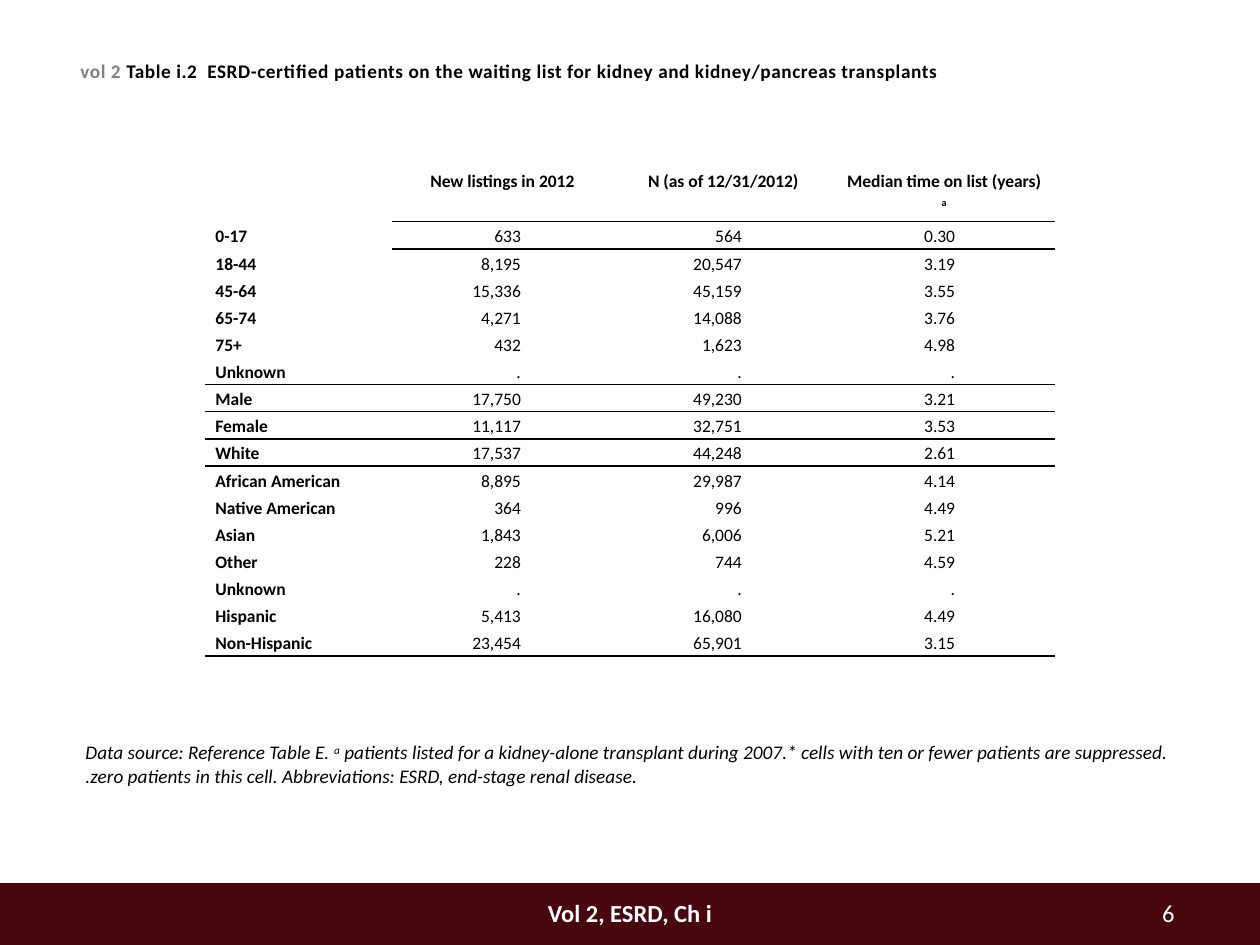
from lxml import etree
from pptx import Presentation
from pptx.dml.color import RGBColor
from pptx.enum.shapes import MSO_SHAPE
from pptx.enum.text import MSO_ANCHOR, PP_ALIGN
from pptx.oxml.ns import qn
from pptx.util import Inches, Pt

LEFT, CENTER, RIGHT = PP_ALIGN.LEFT, PP_ALIGN.CENTER, PP_ALIGN.RIGHT
TOP, MIDDLE = MSO_ANCHOR.TOP, MSO_ANCHOR.MIDDLE
RECTANGLE = MSO_SHAPE.RECTANGLE

MAROON = RGBColor(0x48, 0x07, 0x0E)
WHITE = RGBColor(0xFF, 0xFF, 0xFF)
GRAY = RGBColor(0x80, 0x80, 0x80)
BLACK = RGBColor(0, 0, 0)
FONT = "Calibri"
NO_TABLE_STYLE = "{2D5ABB26-0587-4C30-8999-92F81FD0307C}"

HEADERS = ["", "New listings in 2012", "N (as of 12/31/2012)", "Median time on list (years) "]
PATIENT_ROWS = [
    ("0-17", "633", "564", "0.30"),
    ("18-44", "8,195", "20,547", "3.19"),
    ("45-64", "15,336", "45,159", "3.55"),
    ("65-74", "4,271", "14,088", "3.76"),
    ("75+", "432", "1,623", "4.98"),
    ("Unknown", ".", ".", "."),
    ("Male", "17,750", "49,230", "3.21"),
    ("Female", "11,117", "32,751", "3.53"),
    ("White", "17,537", "44,248", "2.61"),
    ("African American", "8,895", "29,987", "4.14"),
    ("Native American", "364", "996", "4.49"),
    ("Asian", "1,843", "6,006", "5.21"),
    ("Other", "228", "744", "4.59"),
    ("Unknown", ".", ".", "."),
    ("Hispanic", "5,413", "16,080", "4.49"),
    ("Non-Hispanic", "23,454", "65,901", "3.15"),
]
RULED_ROWS = (0, 6, 8, 16)  # table rows with a line below
RIGHT_INSETS = (0.08, 0.73, 0.73, 0.79)


def add_run(paragraph, text, size, color=BLACK, bold=False, italic=False, **attributes):
    """Add a formatted run; attributes go onto its a:rPr, such as spc or baseline."""
    run = paragraph.add_run()
    run.text = text
    font = run.font
    font.name, font.size, font.bold, font.italic = FONT, Pt(size), bold, italic
    font.color.rgb = color
    for key, value in attributes.items():
        run._r.get_or_add_rPr().set(key, str(value))


def add_text_area(slide, left, top, width, height, align=LEFT):
    """Add a wrapping text box and return its first paragraph."""
    frame = slide.shapes.add_textbox(left, top, width, height).text_frame
    frame.word_wrap = True
    paragraph = frame.paragraphs[0]
    paragraph.alignment = align
    return paragraph


def add_title(slide, left, top, width, height):
    title = add_text_area(slide, left, top, width, height)
    add_run(title, "vol 2", 11, GRAY, bold=True, spc=30)
    add_run(title, " Table i.2  ESRD-certified patients on the waiting list "
            "for kidney and kidney/pancreas transplants", 11, bold=True, spc=30)


def add_border(cell, side):
    line = etree.Element(qn(f"a:{side}"), w=str(Pt(1)))
    fill = etree.SubElement(line, qn("a:solidFill"))
    etree.SubElement(fill, qn("a:srgbClr"), val=str(BLACK))
    cell._tc.get_or_add_tcPr().insert(0, line)


def fill_cell(cell, text, row, column):
    is_header, is_label = row == 0, column == 0
    cell.fill.background()
    cell.margin_top = cell.margin_bottom = 0
    cell.margin_left = Inches(0.08 if is_header or is_label else 0.09)
    cell.margin_right = Inches(0.08 if is_header else RIGHT_INSETS[column])
    cell.vertical_anchor = TOP if is_header else MIDDLE
    paragraph = cell.text_frame.paragraphs[0]
    paragraph.line_spacing = 1.15
    paragraph.alignment = CENTER if is_header else LEFT if is_label else RIGHT
    if text:
        add_run(paragraph, text, 10, bold=is_header or is_label)
    if is_header and column == len(HEADERS) - 1:
        add_run(paragraph, "a", 10, bold=True, baseline=30000)
    if is_header and is_label:
        return
    if row in RULED_ROWS:
        add_border(cell, "lnB")
    elif row - 1 in RULED_ROWS and not (row == 1 and is_label):
        add_border(cell, "lnT")


def add_waiting_list_table(slide, left, top, width, height):
    rows = [HEADERS, *PATIENT_ROWS]
    table = slide.shapes.add_table(len(rows), len(HEADERS), left, top, width, height).table
    table.first_row = table.horz_banding = False
    table._tbl.tblPr.find(qn("a:tableStyleId")).text = NO_TABLE_STYLE

    label_width, header_height = Inches(1.48), Inches(0.43)
    value_width = (width - label_width) // (len(HEADERS) - 1)
    for index, column in enumerate(table.columns):
        column.width = value_width if index else label_width
    row_height = (height - header_height) // len(PATIENT_ROWS)
    for index, row in enumerate(table.rows):
        row.height = row_height if index else header_height

    for r, texts in enumerate(rows):
        for c, text in enumerate(texts):
            fill_cell(table.cell(r, c), text, r, c)


def add_source_note(slide, left, top, width, height):
    note = add_text_area(slide, left, top, width, height)
    add_run(note, "Data source: Reference Table E. ", 11, italic=True)
    add_run(note, "a", 11, italic=True, baseline=30000)
    add_run(note, " patients listed for a kidney-alone transplant during 2007.* cells with ten "
            "or fewer patients are suppressed. .zero patients in this cell. "
            "Abbreviations: ESRD, end-stage renal disease.", 11, italic=True)


def add_footer(slide, left, top, width, height):
    band = slide.shapes.add_shape(RECTANGLE, left, top, width, height)
    band.shadow.inherit = False
    band.fill.solid()
    band.fill.fore_color.rgb = MAROON
    band.line.fill.background()

    text_top = top + Inches(0.07)
    chapter_width = Inches(2.17)
    chapter = add_text_area(slide, left + (width - chapter_width) // 2, text_top,
                            chapter_width, Inches(0.33), CENTER)
    add_run(chapter, "Vol 2, ESRD, Ch i", 14, WHITE, bold=True)
    page_number = add_text_area(slide, left + Inches(8.42), text_top,
                                Inches(1), Inches(0.3), RIGHT)
    add_run(page_number, "6", 14, WHITE)


def main():
    presentation = Presentation()
    presentation.slide_width, presentation.slide_height = Inches(10), Inches(7.5)
    slide = presentation.slides.add_slide(presentation.slide_layouts[6])
    add_footer(slide, 0, Inches(7.01), Inches(10), Inches(0.49))
    add_title(slide, Inches(0.54), Inches(0.42), Inches(8.93), Inches(0.5))
    add_waiting_list_table(slide, Inches(1.63), Inches(1.33), Inches(6.74), Inches(3.88))
    add_source_note(slide, Inches(0.58), Inches(5.83), Inches(8.83), Inches(0.47))
    presentation.save("out.pptx")


if __name__ == "__main__":
    main()
